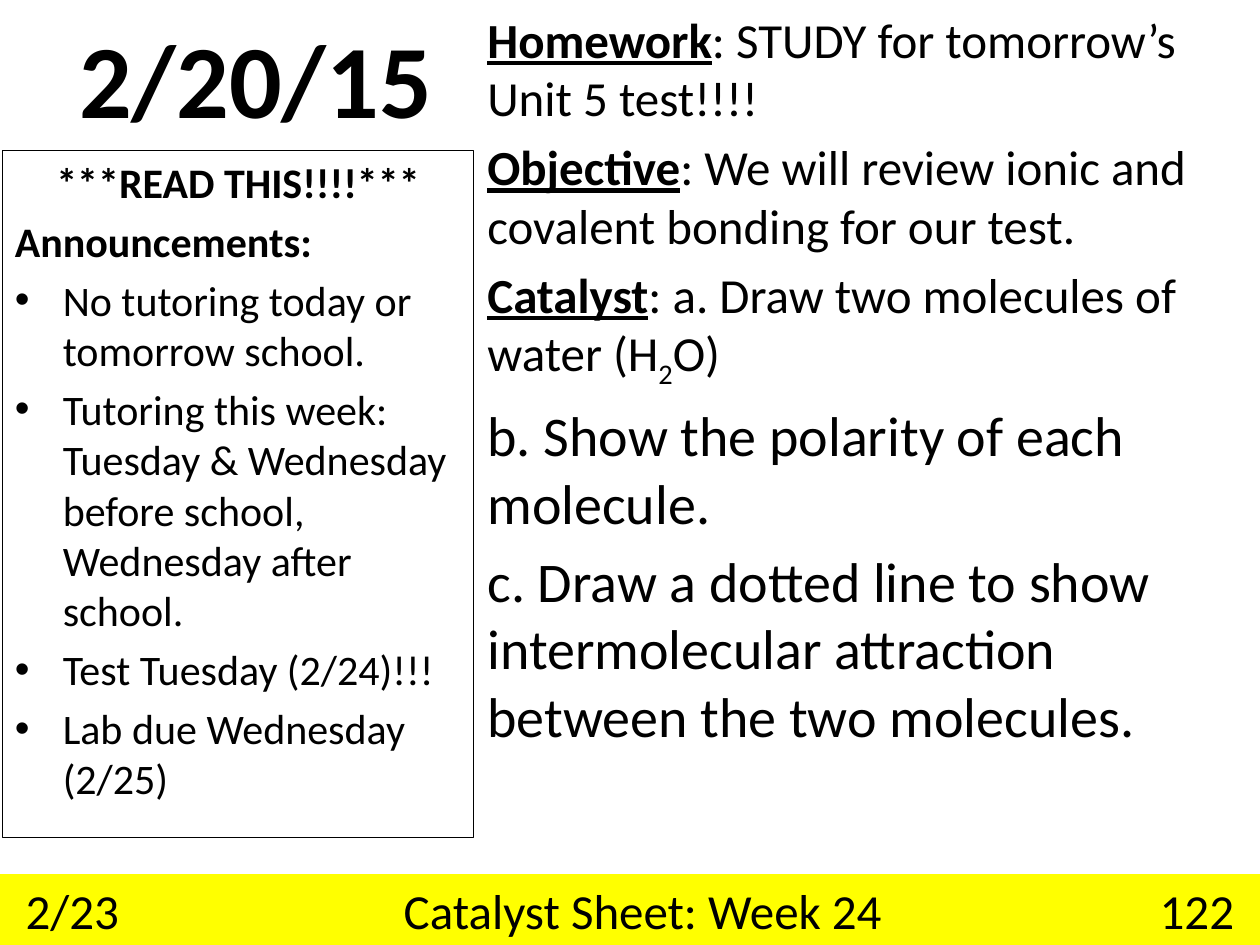
import pptx
import pptx.util
import pptx.dml.color
import pptx.enum.shapes
import pptx.enum.text
import lxml.etree

BLACK = pptx.dml.color.RGBColor(0x00, 0x00, 0x00)
YELLOW = pptx.dml.color.RGBColor(0xFF, 0xFF, 0x00)
ALIGN = pptx.enum.text.PP_ALIGN
ANCHOR = pptx.enum.text.MSO_ANCHOR
BOLD = {"bold": True}
HEADING = {"bold": True, "underline": True}
INDENT = pptx.util.Inches(0.38)
TAB = pptx.util.Inches(0.5)


class Board:
    """Holds the style and the current slide; boxes are shares of the slide."""
    font = {"name": "Calibri"}

    def __init__(self, deck):
        self.width, self.height = deck.slide_width, deck.slide_height
        self.slide = deck.slides.add_slide(deck.slide_layouts[6])

    def place(self, left, top, width, height):
        return [round(share * side) for share, side in
                zip((left, top, width, height), (self.width, self.height) * 2)]

    def text_area(self, box, anchor=ANCHOR.TOP):
        frame = self.slide.shapes.add_textbox(*self.place(*box)).text_frame
        frame.word_wrap, frame.vertical_anchor = True, anchor
        return frame

    def panel(self, box, fill=None, line=None, anchor=ANCHOR.TOP):
        panel = self.slide.shapes.add_shape(
            pptx.enum.shapes.MSO_SHAPE.RECTANGLE, *self.place(*box))
        panel.shadow.inherit = False
        for part, color in ((panel.fill, fill), (panel.line.fill, line)):
            if color is None:
                part.background()
            else:
                part.solid()
                part.fore_color.rgb = color
        if line is not None:
            panel.line.width = pptx.util.Pt(0.75)
        panel.text_frame.word_wrap = True
        panel.text_frame.vertical_anchor = anchor
        return panel.text_frame

    def paragraph(self, frame, runs, size, align=ALIGN.LEFT, gap=0.2, bullet=False):
        line = frame.paragraphs[0]
        if line.runs:
            line = frame.add_paragraph()
        line.alignment = align
        line.space_before = pptx.util.Pt(size * gap)
        properties = line._p.get_or_add_pPr()
        properties.set("defTabSz", str(TAB))
        if bullet:
            properties.set("marL", str(INDENT))
            properties.set("indent", str(-INDENT))
            for tag, key, value in (("buFont", "typeface", "Arial"), ("buChar", "char", "•")):
                lxml.etree.SubElement(properties, pptx.oxml.ns.qn("a:" + tag)).set(key, value)
        for text, formats in runs:
            run = line.add_run()
            run.text = text
            run.font.color.rgb = BLACK
            values = {**self.font, "size": pptx.util.Pt(size), **formats}
            baseline = values.pop("baseline", None)
            for name, value in values.items():
                setattr(run.font, name, value)
            if baseline:
                run._r.get_or_add_rPr().set("baseline", baseline)


def main():
    deck = pptx.Presentation()
    deck.slide_width, deck.slide_height = pptx.util.Inches(10), pptx.util.Inches(7.5)
    board = Board(deck)

    # Date
    date = board.text_area((-0.047, 0.003, 0.5, 0.156), ANCHOR.MIDDLE)
    board.paragraph(date, [("2/20/15", BOLD)], 59.4, ALIGN.CENTER, gap=0)

    # Announcements
    news = board.panel((0.002, 0.159, 0.374, 0.727), line=BLACK)
    board.paragraph(news, [("***READ THIS!!!!***", BOLD)], 24, ALIGN.CENTER)
    board.paragraph(news, [("Announcements:", BOLD)], 24)
    for item in (
        "No tutoring today or tomorrow school.",
        "Tutoring this week: Tuesday & Wednesday before school, Wednesday after school.",
        "Test Tuesday (2/24)!!!",
        "Lab due Wednesday (2/25)",
    ):
        board.paragraph(news, [(item, {})], 24, bullet=True)

    # Homework, objective and catalyst
    agenda = board.text_area((0.377, 0.003, 0.623, 0.923))
    for size, runs in (
        (28, [("Homework", HEADING), (": STUDY for tomorrow’s Unit 5 test!!!!", {})]),
        (28, [("Objective", HEADING),
              (": We will review ionic and covalent bonding for our test.", {})]),
        (28, [("Catalyst", HEADING), (": a. Draw two molecules of water (H", {}),
              ("2", {"baseline": "-25000"}), ("O)", {})]),
        (32, [("b. Show the polarity of each molecule.", {})]),
        (32, [("c. Draw a dotted line to show intermolecular attraction "
               "between the two molecules.", {})]),
    ):
        board.paragraph(agenda, runs, size)

    # Footer band
    footer = board.panel((0, 0.925, 1, 0.075), fill=YELLOW, anchor=ANCHOR.MIDDLE)
    labels = ("2/23", "Catalyst Sheet: Week 24", "122")
    board.paragraph(footer, [(("\t" * 5).join(labels), {})], 28, ALIGN.CENTER, gap=0)

    deck.save("out.pptx")


if __name__ == "__main__":
    main()
